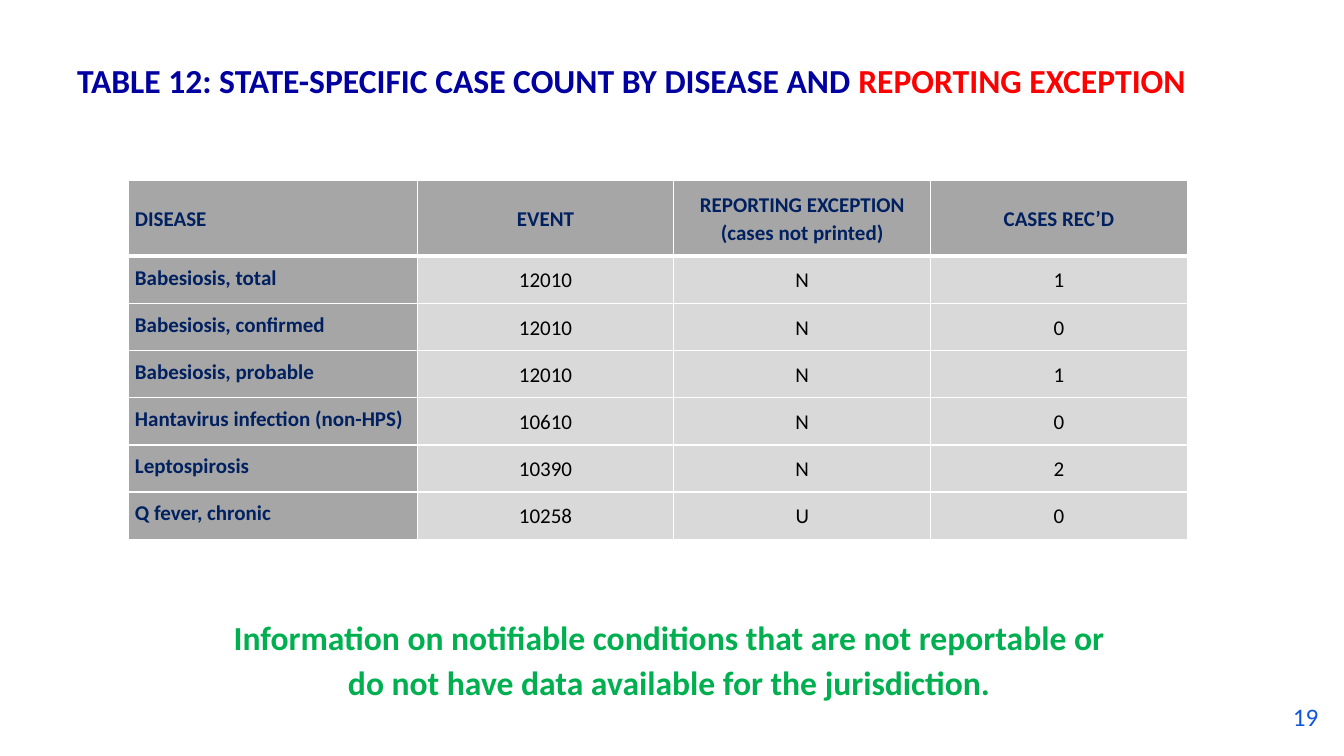
from dataclasses import dataclass

import lxml.etree
import pptx
import pptx.dml.color
import pptx.enum.text
import pptx.oxml.ns
import pptx.util

Pt = pptx.util.Pt
RGBColor = pptx.dml.color.RGBColor
Align = pptx.enum.text.PP_ALIGN
Anchor = pptx.enum.text.MSO_ANCHOR

WHITE = RGBColor(0xFF, 0xFF, 0xFF)
BLACK = RGBColor(0x00, 0x00, 0x00)
TITLE_BLUE = RGBColor(0x00, 0x00, 0xA0)
RED = RGBColor(0xFF, 0x00, 0x00)
GREEN = RGBColor(0x00, 0xB0, 0x50)
NAVY = RGBColor(0x00, 0x20, 0x60)
NUMBER_BLUE = RGBColor(0x0F, 0x56, 0xDC)
DARK_GREY = RGBColor(0xA6, 0xA6, 0xA6)
LIGHT_GREY = RGBColor(0xD9, 0xD9, 0xD9)

FONT = "Calibri"
HEADINGS = ("DISEASE", "EVENT", "REPORTING EXCEPTION\n(cases not printed)", "CASES REC’D")
COLUMN_WIDTHS = (206.6, 183.4, 183.4, 183.4)
HEADER_HEIGHT = 53.9
ROW_HEIGHT = 33.7


@dataclass(frozen=True)
class DiseaseCount:
    disease: str
    event: str
    exception: str
    cases: str


@dataclass(frozen=True)
class Span:
    text: str
    color: RGBColor


COUNTS = (
    DiseaseCount("Babesiosis, total", "12010", "N", "1"),
    DiseaseCount("Babesiosis, confirmed", "12010", "N", "0"),
    DiseaseCount("Babesiosis, probable", "12010", "N", "1"),
    DiseaseCount("Hantavirus infection (non-HPS)", "10610", "N", "0"),
    DiseaseCount("Leptospirosis", "10390", "N", "2"),
    DiseaseCount("Q fever, chronic", "10258", "U", "0"),
)


def write_text(frame, *spans: Span, size: float, bold: bool = False,
               align: Align = Align.LEFT, line_spacing: float = 1.0,
               space_before: float = 0) -> None:
    """Fill a text frame; a line feed inside a span starts a new paragraph."""
    para = frame.paragraphs[0]
    paras = [para]
    for span in spans:
        for index, line in enumerate(span.text.split("\n")):
            if index:
                para = frame.add_paragraph()
                paras.append(para)
            run = para.add_run()
            run.text = line
            run.font.name = FONT
            run.font.size = Pt(size)
            run.font.bold = bold
            run.font.color.rgb = span.color
    for index, para in enumerate(paras):
        para.alignment = align
        para.line_spacing = line_spacing
        para.space_before = Pt(space_before if index else 0)


def add_text_frame(page, left: float, top: float, width: float, height: float,
                   anchor: Anchor = Anchor.TOP):
    box = page.shapes.add_textbox(Pt(left), Pt(top), Pt(width), Pt(height))
    frame = box.text_frame
    frame.word_wrap = True
    frame.vertical_anchor = anchor
    return frame


def set_borders(cell, top: float, bottom: float) -> None:
    """Draw white cell borders, one point wide at the sides."""
    properties = cell._tc.get_or_add_tcPr()
    for side, width in (("L", 1), ("R", 1), ("T", top), ("B", bottom)):
        line = lxml.etree.SubElement(properties, pptx.oxml.ns.qn(f"a:ln{side}"), w=str(Pt(width)))
        fill = lxml.etree.SubElement(line, pptx.oxml.ns.qn("a:solidFill"))
        lxml.etree.SubElement(fill, pptx.oxml.ns.qn("a:srgbClr"), val=str(WHITE))


def format_cell(cell, text: str, row: int, column: int) -> None:
    is_label = row == 0 or column == 0
    cell.margin_left = cell.margin_right = cell.margin_top = cell.margin_bottom = Pt(5)
    cell.vertical_anchor = Anchor.TOP if row and column == 0 else Anchor.MIDDLE
    set_borders(cell, top=3 if row == 1 else 1, bottom=3 if row == 0 else 1)
    cell.fill.solid()
    cell.fill.fore_color.rgb = DARK_GREY if is_label else LIGHT_GREY
    write_text(cell.text_frame, Span(text, NAVY if is_label else BLACK), size=15,
               bold=is_label, align=Align.CENTER if column else Align.LEFT,
               line_spacing=1.07)


def add_count_table(page, left: float, top: float) -> None:
    rows = [HEADINGS] + [(count.disease, count.event, count.exception, count.cases)
                         for count in COUNTS]
    height = HEADER_HEIGHT + ROW_HEIGHT * len(COUNTS)
    table = page.shapes.add_table(len(rows), len(HEADINGS), Pt(left), Pt(top),
                                  Pt(sum(COLUMN_WIDTHS)), Pt(height)).table
    table.horz_banding = False
    for column, width in zip(table.columns, COLUMN_WIDTHS):
        column.width = Pt(width)
    for row, texts in enumerate(rows):
        table.rows[row].height = Pt(ROW_HEIGHT if row else HEADER_HEIGHT)
        for column, text in enumerate(texts):
            format_cell(table.cell(row, column), text, row, column)


def main() -> None:
    deck = pptx.Presentation()
    deck.slide_width, deck.slide_height = Pt(960), Pt(540)
    page = deck.slides.add_slide(deck.slide_layouts[6])

    number = add_text_frame(page, 858.2, 497.5, 90.7, 28.8)
    write_text(number, Span("19", NUMBER_BLUE), size=18, align=Align.RIGHT)

    title = add_text_frame(page, 48, 21.6, 864, 90, anchor=Anchor.MIDDLE)
    title.margin_bottom = Pt(18.6)
    write_text(title, Span("TABLE 12: STATE-SPECIFIC CASE COUNT BY DISEASE AND ", TITLE_BLUE),
               Span("REPORTING EXCEPTION", RED), size=24, bold=True, line_spacing=0.9)

    message = add_text_frame(page, 91.4, 440.6, 782, 56.2)
    message.margin_right = Pt(16)
    write_text(message, Span("Information on notifiable conditions that are not reportable or\n"
                             "do not have data available for the jurisdiction.", GREEN),
               size=24, bold=True, align=Align.CENTER, line_spacing=0.9, space_before=6)

    add_count_table(page, 91.4, 129.2)
    deck.save("out.pptx")


if __name__ == "__main__":
    main()
